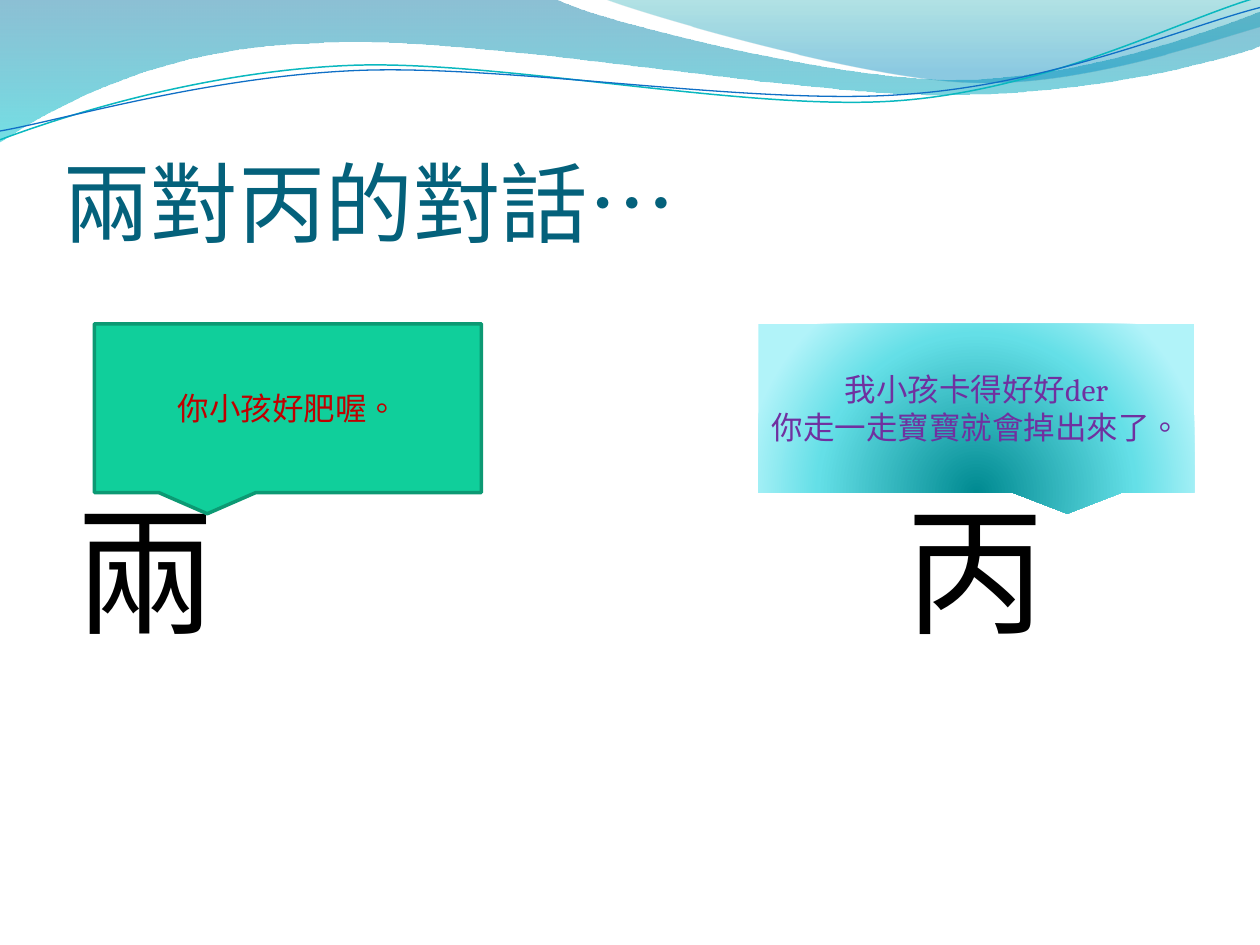
from lxml import etree
from pptx import Presentation
from pptx.dml.color import RGBColor
from pptx.enum.shapes import MSO_SHAPE
from pptx.enum.text import MSO_ANCHOR, MSO_AUTO_SIZE, PP_ALIGN
from pptx.oxml import parse_xml
from pptx.oxml.ns import nsdecls, qn
from pptx.util import Inches, Pt

# Colours
TITLE_TEAL = RGBColor(0x04, 0x61, 0x7B)
BLACK = RGBColor(0, 0, 0)
GREEN = RGBColor(0x10, 0xCF, 0x9B)
DARK_GREEN = RGBColor(0x0C, 0x99, 0x73)
RED = RGBColor(0xC0, 0, 0)
PURPLE = RGBColor(0x70, 0x30, 0xA0)
LINE_TEAL = RGBColor(0x0A, 0xB8, 0xBF)
LINE_BLUE = RGBColor(0x0F, 0x6F, 0xC6)

# Content: speakers are (name, left, width)
TITLE = "兩對丙的對話…"
SPEAKERS = [("兩", 0.5, 6.5), ("丙", 7.09, 2.41)]
LEFT_SPEECH = ["你小孩好肥喔。"]
RIGHT_SPEECH = ["我小孩卡得好好der", "你走一走寶寶就會掉出來了。"]

# Gradients: stops are (position %, colour, opacity %)
DOWNWARD = '<a:lin ang="5400000" scaled="0"/>'
CIRCULAR = ('<a:path path="circle"><a:fillToRect l="50000" t="130000" '
            'r="50000" b="-30000"/></a:path>')
BUBBLE_STOPS = [(0, "008A91", 100), (68, "64DFE7", 100), (100, "B1F3F9", 100)]

# Waves: a start, then segments of one point (line) or three points (curve)
WAVE_FILLS = [
    ((0, 0), [
        [(4.4, -0.01)],
        [(4.76, 0.17), (6.64, 0.63), (7.58, 0.63)],
        [(8.53, 0.63), (9.58, 0.26), (10, 0.09)],
        [(10.01, 0.36)],
        [(9.83, 0.44), (8.7, 0.76), (7.46, 0.75)],
        [(6.22, 0.75), (3.82, 0.28), (2.57, 0.34)],
        [(1.29, 0.36), (0.46, 0.83), (-0.01, 1.13)],
    ], [(0, "0074A1", 45), (100, "00C6CF", 55)]),
    ((4.79, -0.01), [
        [(5.09, 0.11), (6.82, 0.62), (7.69, 0.65)],
        [(8.56, 0.69), (9.61, 0.32), (10, 0.21)],
        [(10, 0)],
    ], [(0, "00A1A9", 30), (80, "008BBF", 45)]),
]
WAVE_LINES = [
    ((0, 1.11), [
        [(0.48, 0.93), (1.58, 0.57), (2.77, 0.52)],
        [(3.95, 0.47), (5.93, 0.89), (7.13, 0.8)],
        [(8.33, 0.71), (9.38, 0.15), (9.98, -0.02)],
    ], LINE_TEAL, 0.85),
    ((0, 1.04), [
        [(0.47, 0.96), (1.64, 0.61), (2.83, 0.56)],
        [(4.03, 0.51), (5.97, 0.84), (7.17, 0.75)],
        [(8.36, 0.67), (9.41, 0.21), (10, 0.06)],
    ], LINE_BLUE, 0.75),
]


def add_wave(shapes, start, segments, close):
    """Draw through every point, then merge each group of three into a curve."""
    builder = shapes.build_freeform(Inches(start[0]), Inches(start[1]))
    builder.add_line_segments([(Inches(x), Inches(y)) for segment in segments
                               for x, y in segment], close=close)
    wave = builder.convert_to_shape()
    wave.shadow.inherit = False
    steps = iter(list(wave._element.iter(qn("a:lnTo"))))
    for segment in segments:
        group = [next(steps) for _ in segment]
        if len(group) == 3:
            curve = etree.Element(qn("a:cubicBezTo"))
            group[0].addprevious(curve)
            for step in group:
                curve.append(step[0])
                step.getparent().remove(step)
    return wave


def set_gradient(shape, stops, direction):
    shape.fill.gradient()
    old = shape._element.spPr.find(qn("a:gradFill"))
    stop_xml = "".join(
        f'<a:gs pos="{position * 1000}"><a:srgbClr val="{colour}">'
        f'<a:alpha val="{opacity * 1000}"/></a:srgbClr></a:gs>'
        for position, colour, opacity in stops)
    old.getparent().replace(old, parse_xml(
        f'<a:gradFill {nsdecls("a")} rotWithShape="1"><a:gsLst>{stop_xml}</a:gsLst>'
        f'{direction}</a:gradFill>'))
    shape.line.fill.background()


def set_font(paragraph, name, size, colour):
    paragraph.font.name = name
    paragraph.font.size = Pt(size)
    paragraph.font.color.rgb = colour


def set_taiwanese(paragraph):
    for run in paragraph.runs:
        run._r.get_or_add_rPr().set("lang", "zh-TW")


def add_callout(shapes, left, width, lines, colour):
    callout = shapes.add_shape(MSO_SHAPE.RECTANGULAR_CALLOUT, Inches(left),
                               Inches(2.57), Inches(width), Inches(1.34))
    callout.shadow.inherit = False
    frame = callout.text_frame
    frame.word_wrap = True
    frame.vertical_anchor = MSO_ANCHOR.MIDDLE
    frame.text = "\n".join(lines)
    for paragraph in frame.paragraphs:
        paragraph.alignment = PP_ALIGN.CENTER
        set_font(paragraph, "Cambria", 18, colour)
        set_taiwanese(paragraph)
    return callout


def place(placeholder, left, top, width, height):
    placeholder.left, placeholder.top = Inches(left), Inches(top)
    placeholder.width, placeholder.height = Inches(width), Inches(height)


presentation = Presentation()
presentation.slide_width, presentation.slide_height = Inches(10), Inches(7.5)
slide = presentation.slides.add_slide(presentation.slide_layouts[3])
shapes = slide.shapes
title, *bodies = list(slide.placeholders)

# Wave header, kept behind the placeholders
for start, segments, stops in WAVE_FILLS:
    set_gradient(add_wave(shapes, start, segments, True), stops, DOWNWARD)
for start, segments, colour, width in WAVE_LINES:
    wave = add_wave(shapes, start, segments, False)
    wave.fill.background()
    wave.line.color.rgb = colour
    wave.line.width = Pt(width)
for placeholder in (title, *bodies):
    shapes._spTree.append(placeholder._element)

# Title
place(title, 0.5, 0.77, 9, 1.25)
frame = title.text_frame
frame.text = TITLE
frame.auto_size = MSO_AUTO_SIZE.NONE
frame.vertical_anchor = MSO_ANCHOR.BOTTOM
frame.margin_left = frame.margin_right = frame.margin_bottom = 0
frame.paragraphs[0].alignment = PP_ALIGN.LEFT
set_font(frame.paragraphs[0], "Calibri", 50, TITLE_TEAL)

# The two speakers, below their bubbles
for body, (name, left, width) in zip(bodies, SPEAKERS):
    place(body, left, 2.12, width, 4.8)
    frame = body.text_frame
    frame.text = name
    frame.auto_size = MSO_AUTO_SIZE.NONE
    frame.margin_top = Inches(1.72)
    speaker = frame.paragraphs[0]
    speaker.space_before = Pt(0)
    set_font(speaker, "Cambria", 80, BLACK)
    set_taiwanese(speaker)
    properties = speaker._element.get_or_add_pPr()
    properties.set("marL", "0")
    properties.set("indent", "0")
    properties.find(qn("a:defRPr")).addprevious(etree.Element(qn("a:buNone")))

# Speech bubbles
left_bubble = add_callout(shapes, 0.75, 3.07, LEFT_SPEECH, RED)
left_bubble.fill.solid()
left_bubble.fill.fore_color.rgb = GREEN
left_bubble.line.color.rgb = DARK_GREEN
left_bubble.line.width = Pt(2)

right_bubble = add_callout(shapes, 6.02, 3.46, RIGHT_SPEECH, PURPLE)
set_gradient(right_bubble, BUBBLE_STOPS, CIRCULAR)
right_bubble._element.spPr.find(qn("a:xfrm")).set("flipH", "1")

presentation.save("out.pptx")
